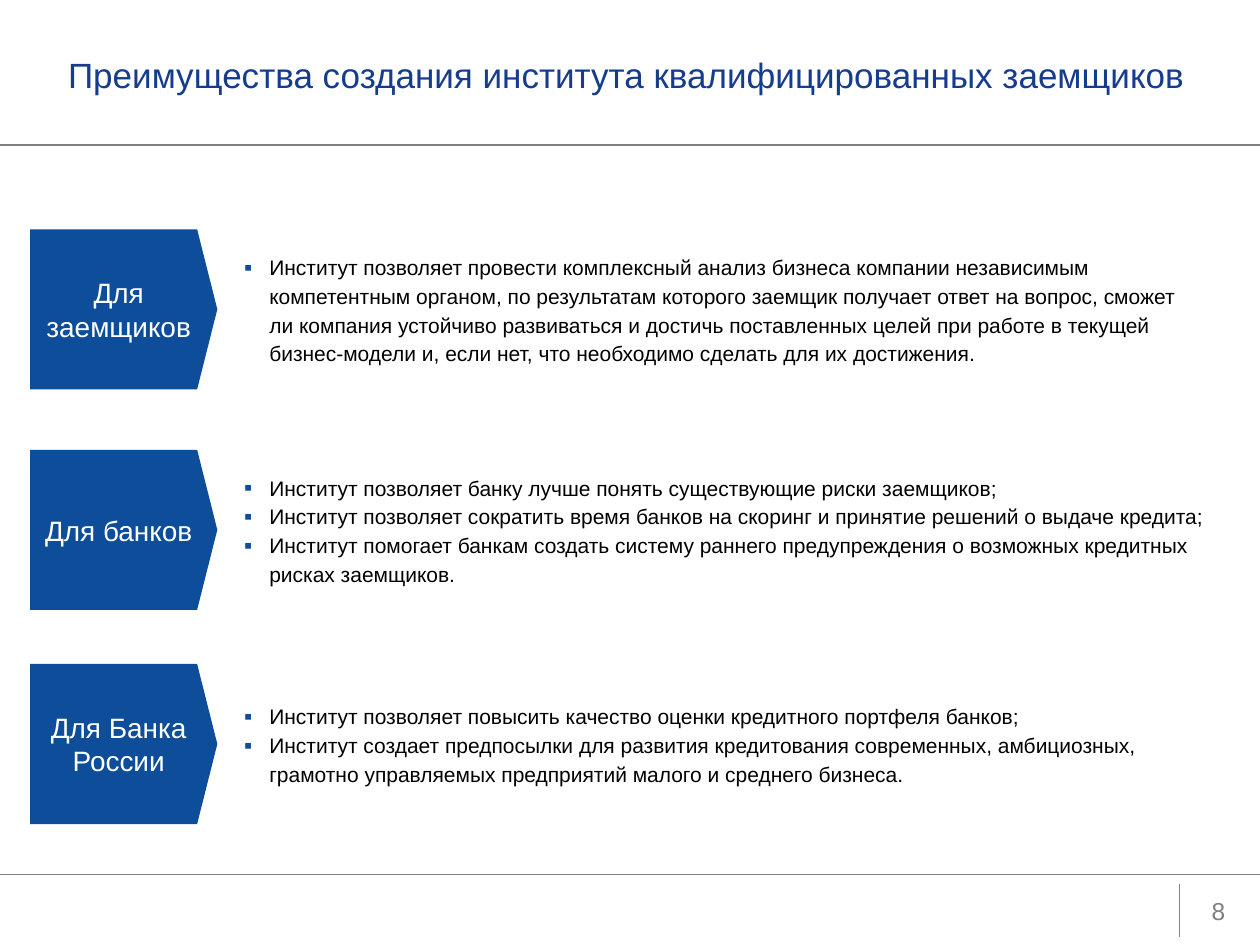
from dataclasses import dataclass

from lxml.etree import SubElement
from pptx import Presentation
from pptx.dml.color import RGBColor
from pptx.enum.shapes import MSO_CONNECTOR as Connector, MSO_SHAPE as Shape
from pptx.enum.text import MSO_ANCHOR as Anchor, MSO_AUTO_SIZE as AutoSize, PP_ALIGN as Align
from pptx.oxml.ns import qn
from pptx.util import Inches, Pt


@dataclass(frozen=True)
class Theme:
    font: str = "Arial"
    title: str = "153C8D"
    accent: str = "0E4D99"
    body: str = "000000"
    light: str = "FFFFFF"
    rule: str = "808080"
    divider: str = "858585"
    number: str = "7F7F7F"
    title_size: int = 20
    label_size: int = 16
    body_size: int = 12
    number_size: int = 14


@dataclass(frozen=True)
class Box:
    left: float
    top: float
    width: float
    height: float

    def emu(self):
        return [Inches(v) for v in (self.left, self.top, self.width, self.height)]

    def share(self, x, y, width, height):
        """Return the box lying at the given shares of this one."""
        return Box(self.left + x * self.width, self.top + y * self.height,
                   width * self.width, height * self.height)


THEME = Theme()
PAGE = Box(0, 0, 10, 7.5)
HEADER = Box(0, 0, 10, 1.15)
FOOTER = Box(0, 6.94, 10, 0.56)
ROW_HEIGHT = 1.27
LINE_HEIGHT = 0.23

# Row top, label, share of the row for text, text lines, bullets
ROWS = [
    (1.82, "Для заемщиков", 0.805, 4, [
        "Институт позволяет провести комплексный анализ бизнеса компании независимым "
        "компетентным органом, по результатам которого заемщик получает ответ на вопрос, "
        "сможет ли компания устойчиво развиваться и достичь поставленных целей при работе "
        "в текущей бизнес-модели и, если нет, что необходимо сделать для их достижения.",
    ]),
    (3.57, "Для банков", 0.83, 4, [
        "Институт позволяет банку лучше понять существующие риски заемщиков;",
        "Институт позволяет сократить время банков на скоринг и принятие решений "
        "о выдаче кредита;",
        "Институт помогает банкам создать систему раннего предупреждения о возможных "
        "кредитных рисках заемщиков.",
    ]),
    (5.27, "Для Банка России", 0.83, 3, [
        "Институт позволяет повысить качество оценки кредитного портфеля банков;",
        "Институт создает предпосылки для развития кредитования современных, амбициозных, "
        "грамотно управляемых предприятий малого и среднего бизнеса.",
    ]),
]


def add_bullet(para):
    props = para._p.get_or_add_pPr()
    props.set("marL", str(Inches(0.2)))
    props.set("indent", str(Inches(-0.2)))
    color = SubElement(props, qn("a:buClr"))
    SubElement(color, qn("a:srgbClr"), val=THEME.accent)
    SubElement(props, qn("a:buSzPct"), val="110000")
    SubElement(props, qn("a:buFont"), typeface=THEME.font)
    SubElement(props, qn("a:buChar"), char="▪")
    tabs = SubElement(props, qn("a:tabLst"))
    SubElement(tabs, qn("a:tab"), pos=str(Inches(0.59)), algn="l")


def write(frame, *texts, size, color, align=Align.LEFT, anchor=Anchor.MIDDLE,
          spacing=None, bullet=False):
    frame.word_wrap = True
    frame.auto_size = AutoSize.NONE
    frame.vertical_anchor = anchor
    for index, text in enumerate(texts):
        para = frame.paragraphs[0] if index == 0 else frame.add_paragraph()
        if bullet:
            add_bullet(para)
        para.alignment = align
        para.line_spacing = spacing
        span = para.add_run()
        span.text = text
        span.font.name = THEME.font
        span.font.size = Pt(size)
        span.font.color.rgb = RGBColor.from_string(color)


def add_block(page, kind, box, fill):
    block = page.shapes.add_shape(kind, *box.emu())
    block.shadow.inherit = False
    block.fill.solid()
    block.fill.fore_color.rgb = RGBColor.from_string(fill)
    block.line.fill.background()
    return block


def add_rule(page, x1, y1, x2, y2, color=THEME.rule, width=1):
    rule = page.shapes.add_connector(Connector.STRAIGHT, *map(Inches, (x1, y1, x2, y2)))
    rule.line.color.rgb = RGBColor.from_string(color)
    rule.line.width = Pt(width)
    SubElement(rule._element.spPr, qn("a:effectLst"))


def build_header(page, box):
    bottom = box.top + box.height
    add_rule(page, box.left, bottom, box.left + box.width, bottom)
    title = page.shapes.title
    title.left, title.top, title.width, title.height = box.share(0.044, 0, 0.932, 1).emu()
    write(title.text_frame, "Преимущества создания института квалифицированных заемщиков",
          size=THEME.title_size, color=THEME.title, spacing=1.1)


def build_row(page, box, label, text_width, lines, bullets):
    # Arrow with the audience
    arrow = add_block(page, Shape.PENTAGON, box.share(0, 0, 0.156, 1), THEME.accent)
    arrow.adjustments[0] = 0.126
    write(arrow.text_frame, label, size=THEME.label_size, color=THEME.light,
          align=Align.CENTER)
    # Advantages, centred on the arrow
    height = (lines * LINE_HEIGHT + 0.1) / box.height
    area = box.share(0.168, (1 - height) / 2, text_width, height)
    text = page.shapes.add_textbox(*area.emu())
    write(text.text_frame, *bullets, size=THEME.body_size, color=THEME.body,
          anchor=Anchor.TOP, spacing=1.14, bullet=True)


def build_footer(page, box, number):
    add_rule(page, box.left, box.top, box.left + box.width, box.top)
    mark = box.share(0.936, 0.13, 0, 0.76)
    add_rule(page, mark.left, mark.top, mark.left, mark.top + mark.height,
             THEME.divider, 0.75)
    block = add_block(page, Shape.RECTANGLE, box.share(0.942, 0.16, 0.05, 0.7), THEME.light)
    frame = block.text_frame
    frame.margin_left = frame.margin_right = Inches(0.05)
    write(frame, number, size=THEME.number_size, color=THEME.number, align=Align.CENTER)


def main():
    deck = Presentation()
    deck.slide_width, deck.slide_height = Inches(PAGE.width), Inches(PAGE.height)
    page = deck.slides.add_slide(deck.slide_layouts[5])
    build_header(page, HEADER)
    build_footer(page, FOOTER, "8")
    for top, *content in ROWS:
        row = Box(0.024 * PAGE.width, top, 0.952 * PAGE.width, ROW_HEIGHT)
        build_row(page, row, *content)
    deck.save("out.pptx")


if __name__ == "__main__":
    main()
